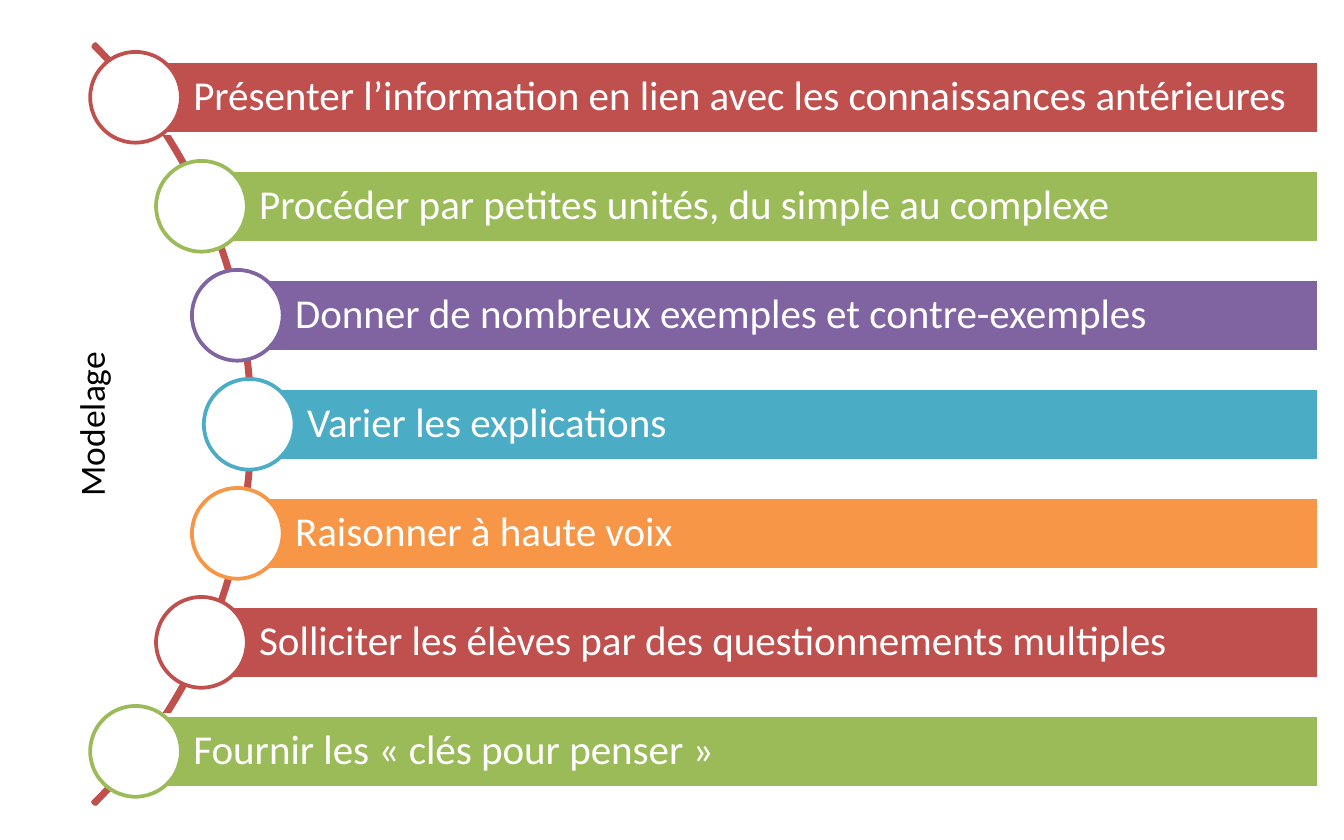
import pptx
import pptx.dml.color
import pptx.enum.shapes
import pptx.enum.text
import pptx.util

Pt = pptx.util.Pt
SHAPE = pptx.enum.shapes.MSO_SHAPE
ANCHOR = pptx.enum.text.MSO_ANCHOR
ALIGN = pptx.enum.text.PP_ALIGN

COLOURS = {
    "red": "C0504D",
    "green": "9BBB59",
    "purple": "8064A2",
    "teal": "4BACC6",
    "orange": "F79646",
    "white": "FFFFFF",
    "black": "000000",
}

# Each step: wording and colour, from top to bottom
STEPS = [
    ("Présenter l’information en lien avec les connaissances antérieures", "red"),
    ("Procéder par petites unités, du simple au complexe", "green"),
    ("Donner de nombreux exemples et contre-exemples", "purple"),
    ("Varier les explications", "teal"),
    ("Raisonner à haute voix", "orange"),
    ("Solliciter les élèves par des questionnements multiples", "red"),
    ("Fournir les « clés pour penser »", "green"),
]

# Bar starts by distance from the middle step
BAR_LEFTS = [133.5, 127.1, 107.9, 72.6]
BAR_RIGHT = 706.7
BAR_HEIGHT = 39
CIRCLE_SIZE = 48.6
MIDDLE_Y = 227.3
STEP_HEIGHT = 58.4
ARC_RADIUS = 288
ARC_CENTRE_X = -152.6

BAR_FRAME = {
    "word_wrap": True,
    "vertical_anchor": ANCHOR.MIDDLE,
    "margin_left": Pt(31),
    "margin_right": Pt(4.4),
    "margin_top": Pt(4.4),
    "margin_bottom": Pt(4.4),
}
LABEL_FRAME = {
    "word_wrap": False,
    "auto_size": pptx.enum.text.MSO_AUTO_SIZE.SHAPE_TO_FIT_TEXT,
    "margin_left": Pt(6),
    "margin_right": Pt(6),
    "margin_top": Pt(3),
    "margin_bottom": Pt(3),
}


def colour(name):
    return pptx.dml.color.RGBColor.from_string(COLOURS[name])


def set_format(target, values):
    for name, value in values.items():
        setattr(target, name, value)


def add_outlined_shape(shapes, kind, box, fill, line):
    shape = shapes.add_shape(kind, *(Pt(length) for length in box))
    shape.shadow.inherit = False
    if fill:
        shape.fill.solid()
        shape.fill.fore_color.rgb = colour(fill)
    else:
        shape.fill.background()
    shape.line.color.rgb = colour(line)
    shape.line.width = Pt(2)
    return shape


def write_text(shape, text, frame, size, colour_name, spacing):
    set_format(shape.text_frame, frame)
    paragraph = shape.text_frame.paragraphs[0]
    set_format(paragraph, {"alignment": ALIGN.LEFT, "line_spacing": spacing})
    run = paragraph.add_run()
    run.text = text
    set_format(run.font, {"name": "Calibri", "size": Pt(size)})
    run.font.color.rgb = colour(colour_name)


def add_arc(shapes):
    box = (ARC_CENTRE_X - ARC_RADIUS, MIDDLE_Y - ARC_RADIUS,
           2 * ARC_RADIUS, 2 * ARC_RADIUS)
    arc = add_outlined_shape(shapes, SHAPE.BLOCK_ARC, box, None, "red")
    # From 315 to 45 degrees, almost without thickness
    for index, value in enumerate((189, 27, 0.003)):
        arc.adjustments[index] = value


def add_step(shapes, offset, text, colour_name):
    left = BAR_LEFTS[abs(offset)]
    centre_y = MIDDLE_Y + offset * STEP_HEIGHT
    bar_box = (left, centre_y - BAR_HEIGHT / 2, BAR_RIGHT - left, BAR_HEIGHT)
    bar = add_outlined_shape(shapes, SHAPE.RECTANGLE, bar_box, colour_name, "white")
    write_text(bar, text, BAR_FRAME, 22, "white", 0.9)
    # The circle is centred on the start of the bar
    circle_box = (left - CIRCLE_SIZE / 2, centre_y - CIRCLE_SIZE / 2,
                  CIRCLE_SIZE, CIRCLE_SIZE)
    add_outlined_shape(shapes, SHAPE.OVAL, circle_box, "white", colour_name)


def add_label(shapes, text):
    label = shapes.add_textbox(Pt(3.6), Pt(212.4), Pt(90), Pt(28.8))
    label.rotation = 270
    write_text(label, text, LABEL_FRAME, 19, "black", 1.0)


def main():
    presentation = pptx.Presentation()
    set_format(presentation, {"slide_width": Pt(720), "slide_height": Pt(450)})
    slide = presentation.slides.add_slide(presentation.slide_layouts[6])

    # Curved list
    diagram = slide.shapes.add_group_shape()
    add_arc(diagram.shapes)
    for index, (text, colour_name) in enumerate(STEPS):
        add_step(diagram.shapes, index - len(STEPS) // 2, text, colour_name)

    # Vertical title
    add_label(slide.shapes, "Modelage")

    presentation.save("out.pptx")


if __name__ == "__main__":
    main()
